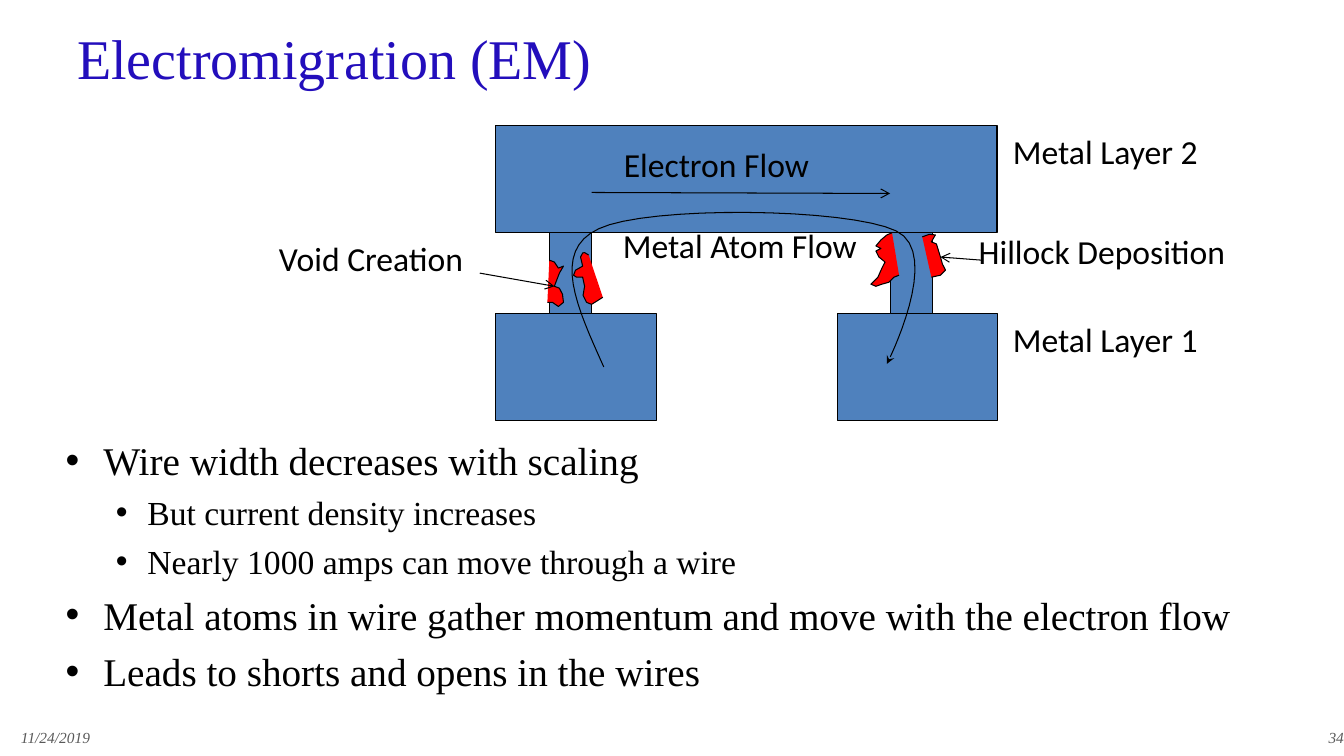
from pptx import Presentation
from pptx.dml.color import RGBColor
from pptx.enum.shapes import MSO_CONNECTOR, MSO_SHAPE
from pptx.enum.text import MSO_ANCHOR, MSO_AUTO_SIZE, PP_ALIGN
from pptx.oxml.ns import qn
from pptx.util import Pt
from lxml.etree import SubElement

BLACK = RGBColor(0x00, 0x00, 0x00)
METAL_BLUE = RGBColor(0x4F, 0x81, 0xBD)
DAMAGE_RED = RGBColor(0xFF, 0x00, 0x00)
TITLE_BLUE = RGBColor(0x23, 0x0E, 0xBC)
FOOTER_GREY = RGBColor(0x59, 0x59, 0x59)

BULLETS = [
    (0, "Wire width decreases with scaling"),
    (1, "But current density increases"),
    (1, "Nearly 1000 amps can move through a wire"),
    (0, "Metal atoms in wire gather momentum and move with the electron flow"),
    (0, "Leads to shorts and opens in the wires"),
]
BULLET_STYLES = [(28, 7, 27, 27), (24, 6, 58.5, 22.5)]

LABELS = [
    ("Metal Atom Flow", 437.8, 157, 182.9),
    ("Metal Layer 1", 716.4, 224, 147.6),
    ("Metal Layer 2", 716.4, 90, 147.6),
    ("Electron Flow", 438.5, 99.4, 148.3),
    ("Hillock Deposition", 692, 161.3, 192.2),
    ("Void Creation", 192.2, 166.3, 147.6),
]
ARROWS = [
    ((422.6, 137.5), (635.8, 138.2)),
    ((342.7, 195.1), (396, 204.5)),
    ((700.6, 185.8), (671.8, 183.6)),
]

RIGHT_VOID = [
    (420.5, 182.2), (417.6, 180.4), (416.2, 180.7), (414.7, 183.6),
    (416.2, 190.1), (411.1, 193), (409.7, 196.6), (411.8, 198),
    (416.2, 198), (417.6, 204.5), (416.5, 211), (419, 216),
    (422.6, 217.4), (430.6, 212.4),
]
LEFT_VOID = [
    (392.4, 185.8), (396, 187.2), (398.9, 191.5), (402.5, 190.1),
    (399.6, 195.1), (396, 204.5), (399.6, 205.9), (401.8, 210.2),
    (402.5, 216), (398.9, 218.9), (394.6, 216), (391, 216),
]
LEFT_HILLOCK = [
    (637.2, 166.3), (633.6, 167.8), (629.3, 171.4), (625.7, 175.7),
    (629.3, 177.5), (625.7, 179.3), (627.8, 183.6), (632.2, 187.2),
    (630, 191.5), (627.1, 198), (622.1, 203), (625.7, 204.5),
    (630, 203), (635, 201.6), (638.6, 198), (642.2, 196.6),
]
RIGHT_HILLOCK = [
    (658.8, 169.2), (663.8, 167.4), (668.2, 167.8), (665.3, 172.8),
    (668.9, 174.2), (671.8, 183.6), (673.2, 188.6), (675.4, 193),
    (671.8, 196.6), (665.3, 198),
]
ATOM_FLOW = [
    (431.3, 262.1),
    (412.6, 220.3), (393.1, 179.3), (427.7, 163.4),
    (462.2, 146.9), (605.5, 148.3), (640.1, 164.9),
    (673.9, 180.7), (633.6, 259.9), (633.6, 259.9),
]


def curve_points(controls, steps=16):
    points = [controls[0]]
    for first in range(0, len(controls) - 1, 3):
        corners = controls[first:first + 4]
        for step in range(1, steps + 1):
            t = step / steps
            weights = ((1 - t) ** 3, 3 * t * (1 - t) ** 2, 3 * t * t * (1 - t), t ** 3)
            points.append(tuple(
                sum(weight * corner[axis] for weight, corner in zip(weights, corners))
                for axis in (0, 1)))
    return points


class SlidePainter:
    heading_font = "Times New Roman"
    label_font = "Calibri"
    line_width = Pt(0.75)

    def __init__(self, page):
        self.page = page

    def style_font(self, para, name, size, color, italic=False):
        para.font.name = name
        para.font.size = Pt(size)
        para.font.color.rgb = color
        para.font.italic = italic

    def place(self, holder, left, top, width, height):
        holder.left, holder.top = Pt(left), Pt(top)
        holder.width, holder.height = Pt(width), Pt(height)
        holder.text_frame.auto_size = MSO_AUTO_SIZE.NONE

    def title(self, text, *bounds):
        holder = self.page.shapes.title
        self.place(holder, *bounds)
        holder.text_frame.vertical_anchor = MSO_ANCHOR.MIDDLE
        para = holder.text_frame.paragraphs[0]
        para.text = text
        para.alignment = PP_ALIGN.LEFT
        self.style_font(para, self.heading_font, 40, TITLE_BLUE)

    def bullets(self, items, *bounds):
        holder = self.page.placeholders[1]
        self.place(holder, *bounds)
        frame = holder.text_frame
        for index, (level, text) in enumerate(items):
            para = frame.add_paragraph() if index else frame.paragraphs[0]
            size, space, margin, hanging = BULLET_STYLES[level]
            para.text = text
            para.level = level
            para.space_before = Pt(space)
            self.style_font(para, self.heading_font, size, BLACK)
            properties = para._p.get_or_add_pPr()
            properties.set("marL", str(Pt(margin)))
            properties.set("indent", str(-Pt(hanging)))
            SubElement(properties, qn("a:buFont")).set("typeface", "Arial")
            SubElement(properties, qn("a:buChar")).set("char", "•")
            properties.append(properties.find(qn("a:defRPr")))

    def text_box(self, text, left, top, width, height, wrap):
        box = self.page.shapes.add_textbox(Pt(left), Pt(top), Pt(width), Pt(height))
        box.text_frame.word_wrap = wrap
        para = box.text_frame.paragraphs[0]
        para.text = text
        return box, para

    def label(self, text, left, top, width):
        box, para = self.text_box(text, left, top, width, 36, False)
        self.style_font(para, self.label_font, 24, BLACK)

    def footer(self, text, left, alignment):
        box, para = self.text_box(text, left, 519.5, 224, 15, True)
        box.text_frame.vertical_anchor = MSO_ANCHOR.MIDDLE
        para.alignment = alignment
        box.text_frame.margin_right = 0
        self.style_font(para, self.heading_font, 11, FOOTER_GREY, True)

    def outline(self, line, arrowhead=None):
        line.width = self.line_width
        line.color.rgb = BLACK
        if arrowhead:
            SubElement(line._get_or_add_ln(), qn("a:tailEnd")).set("type", arrowhead)

    def metal(self, left, top, width, height):
        block = self.page.shapes.add_shape(
            MSO_SHAPE.RECTANGLE, Pt(left), Pt(top), Pt(width), Pt(height))
        block.fill.solid()
        block.fill.fore_color.rgb = METAL_BLUE
        self.outline(block.line)
        block.shadow.inherit = False

    def freeform(self, points, fill=None, arrowhead=None):
        corners = [(Pt(x), Pt(y)) for x, y in points]
        builder = self.page.shapes.build_freeform(*corners[0])
        builder.add_line_segments(corners[1:], close=False)
        shape = builder.convert_to_shape()
        if fill is None:
            shape.fill.background()
        else:
            shape.fill.solid()
            shape.fill.fore_color.rgb = fill
        self.outline(shape.line, arrowhead)
        shape.shadow.inherit = False

    def arrow(self, start, end):
        ends = [Pt(value) for value in (*start, *end)]
        connector = self.page.shapes.add_connector(MSO_CONNECTOR.STRAIGHT, *ends)
        self.outline(connector.line, "arrow")
        SubElement(connector._element.spPr, qn("a:effectLst"))


def main():
    deck = Presentation()
    deck.slide_width, deck.slide_height = Pt(960), Pt(540)
    painter = SlidePainter(deck.slides.add_slide(deck.slide_layouts[1]))
    painter.title("Electromigration (EM)", 48, 5, 864, 72)
    painter.bullets(BULLETS, 39.6, 308.2, 864, 239)
    painter.footer("11/24/2019", 7.9, PP_ALIGN.LEFT)
    painter.footer("34", 736, PP_ALIGN.RIGHT)
    for side in range(2):
        painter.metal(354.2 + 244 * side, 224, 114.5, 76.3)
    for side in range(2):
        painter.metal(392.4 + 243.6 * side, 166.3, 30.2, 57.7)
    painter.metal(354.2, 90, 358, 76.3)
    painter.freeform(curve_points(ATOM_FLOW), arrowhead="stealth")
    for blob in (RIGHT_VOID, LEFT_VOID, LEFT_HILLOCK, RIGHT_HILLOCK):
        painter.freeform(blob, DAMAGE_RED)
    for label in LABELS:
        painter.label(*label)
    for arrow in ARROWS:
        painter.arrow(*arrow)
    deck.save("out.pptx")


if __name__ == "__main__":
    main()
